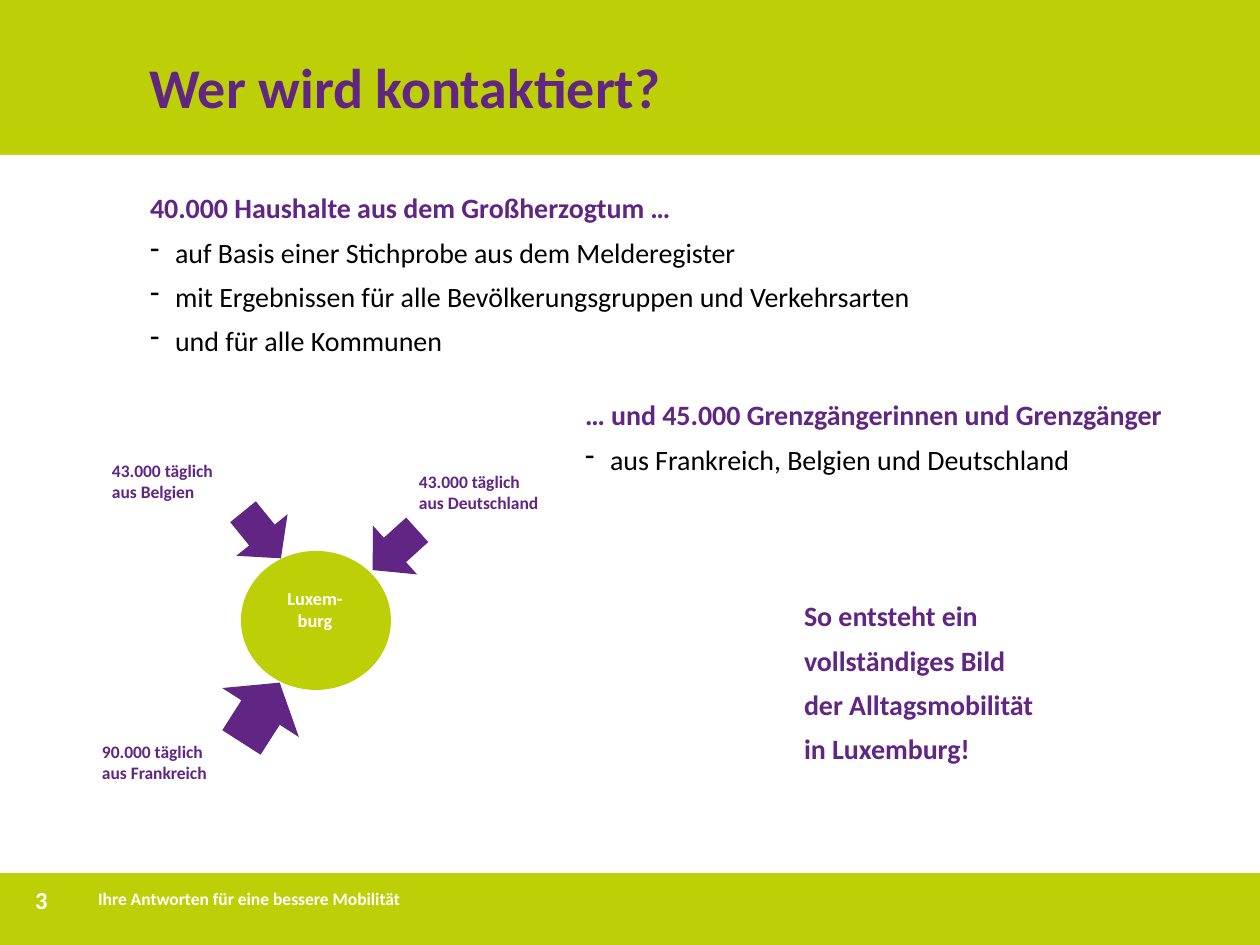
"""Build the slide on who is contacted for the mobility survey."""
import dataclasses
import typing

import lxml.etree
import pptx
import pptx.dml.color
import pptx.enum.shapes
import pptx.enum.text
import pptx.oxml.ns
import pptx.util

LIME = pptx.dml.color.RGBColor(0xBD, 0xCF, 0x06)
PURPLE = pptx.dml.color.RGBColor(0x61, 0x25, 0x83)
WHITE = pptx.dml.color.RGBColor(0xFF, 0xFF, 0xFF)
BLACK = pptx.dml.color.RGBColor(0x00, 0x00, 0x00)
PX_PER_INCH = 126
SHAPES = pptx.enum.shapes.MSO_SHAPE
ALIGN = pptx.enum.text.PP_ALIGN
ANCHOR = pptx.enum.text.MSO_ANCHOR


def px(length: int) -> int:
    return round(length * pptx.util.Inches(1) / PX_PER_INCH)


class Box(typing.NamedTuple):
    left: int
    top: int
    width: int
    height: int

    def emu(self) -> list[int]:
        return [px(length) for length in self]


@dataclasses.dataclass(frozen=True)
class Line:
    text: str
    size: float = 16
    color: pptx.dml.color.RGBColor = PURPLE
    bold: bool = True
    dash: bool = False
    format: dict = dataclasses.field(default_factory=dict)


@dataclasses.dataclass(frozen=True)
class Passage:
    box: Box
    lines: list[Line]
    insets: tuple[int, int, int, int] = (0, 6, 0, 6)
    anchor: ANCHOR = ANCHOR.TOP


@dataclasses.dataclass(frozen=True)
class Figure:
    preset: SHAPES
    box: Box
    color: pptx.dml.color.RGBColor
    rotation: float = 0


def set_attributes(target: typing.Any, values: dict) -> None:
    for attribute, value in values.items():
        setattr(target, attribute, value)


def add_dash(paragraph: typing.Any) -> None:
    properties = paragraph._p.get_or_add_pPr()
    properties.set("marL", str(px(25)))
    properties.set("indent", str(-px(25)))
    bullet = lxml.etree.SubElement(properties, pptx.oxml.ns.qn("a:buChar"))
    bullet.set("char", "-")


def write_passage(frame: typing.Any, passage: Passage) -> None:
    left, top, right, bottom = map(px, passage.insets)
    set_attributes(frame, {
        "word_wrap": True,
        "auto_size": pptx.enum.text.MSO_AUTO_SIZE.NONE,
        "vertical_anchor": passage.anchor,
        "margin_left": left,
        "margin_top": top,
        "margin_right": right,
        "margin_bottom": bottom,
    })
    for index, line in enumerate(passage.lines):
        paragraph = frame.add_paragraph() if index else frame.paragraphs[0]
        if line.dash:
            add_dash(paragraph)
        set_attributes(paragraph, {"alignment": ALIGN.LEFT} | line.format)
        run = paragraph.add_run()
        run.text = line.text
        set_attributes(run.font, {
            "name": "Calibri",
            "size": pptx.util.Pt(line.size),
            "bold": line.bold,
        })
        run.font.color.rgb = line.color


def add_passage(slide: typing.Any, passage: Passage) -> None:
    write_passage(slide.shapes.add_textbox(*passage.box.emu()).text_frame, passage)


def add_figure(slide: typing.Any, figure: Figure) -> None:
    shape = slide.shapes.add_shape(figure.preset, *figure.box.emu())
    shape.shadow.inherit = False
    shape.fill.solid()
    shape.fill.fore_color.rgb = figure.color
    shape.line.fill.background()
    shape.rotation = figure.rotation


SPACED = {"space_after": pptx.util.Pt(6)}


def heading(text: str) -> Line:
    return Line(text, format=SPACED)


def point(text: str) -> Line:
    return Line(text, color=BLACK, bold=False, dash=True, format=SPACED)


def commuters(box: Box, count: str, country: str) -> Passage:
    lines = [Line(f"{count} täglich", 10), Line(f"aus {country}", 10)]
    return Passage(box, lines, (13, 6, 13, 6))


TITLE = Passage(Box(149, 18, 1057, 137), [Line("Wer wird kontaktiert?", 32)],
                (0, 6, 15, 6), ANCHOR.MIDDLE)
FOOTER = Passage(
    Box(98, 886, 475, 49),
    [Line("Ihre Antworten für eine bessere Mobilität", 10, WHITE,
          format={"line_spacing": pptx.util.Pt(13)})],
    (0, 0, 15, 6))
PAGE_NUMBER = Passage(Box(35, 885, 69, 30), [Line("3", 14, WHITE)],
                      (0, 0, 0, 0), ANCHOR.MIDDLE)
HOUSEHOLDS = Passage(Box(150, 185, 963, 650), [
    heading("40.000 Haushalte aus dem Großherzogtum …"),
    point("auf Basis einer Stichprobe aus dem Melderegister"),
    point("mit Ergebnissen für alle Bevölkerungsgruppen und Verkehrsarten"),
    point("und für alle Kommunen"),
])
CROSS_BORDER = Passage(Box(585, 392, 675, 650), [
    heading("… und 45.000 Grenzgängerinnen und Grenzgänger"),
    point("aus Frankreich, Belgien und Deutschland"),
])
CONCLUSION = Passage(Box(804, 593, 311, 194), [
    heading(text) for text in ("So entsteht ein", "vollständiges Bild",
                               "der Alltagsmobilität", "in Luxemburg!")
])
LUXEMBOURG = Passage(
    Box(261, 581, 108, 76),
    [Line(text, 10.5, WHITE, format={"alignment": ALIGN.CENTER})
     for text in ("Luxem-", "burg")],
    (13, 6, 13, 6))
PASSAGES = [
    FOOTER, PAGE_NUMBER, HOUSEHOLDS, CROSS_BORDER, CONCLUSION,
    commuters(Box(89, 735, 175, 73), "90.000", "Frankreich"),
    commuters(Box(99, 454, 175, 73), "43.000", "Belgien"),
    commuters(Box(406, 465, 194, 73), "43.000", "Deutschland"),
    LUXEMBOURG,
]
CONTENT_AREA = Figure(SHAPES.RECTANGLE, Box(0, 155, 1260, 718), WHITE)
COUNTRY = Figure(SHAPES.OVAL, Box(241, 551, 150, 139), LIME)
INFLOWS = [
    Figure(SHAPES.DOWN_ARROW, Box(215, 677, 91, 71), PURPLE, 212.6),
    Figure(SHAPES.DOWN_ARROW, Box(362, 520, 66, 60), PURPLE, 47.9),
    Figure(SHAPES.DOWN_ARROW, Box(229, 505, 66, 60), PURPLE, 320.9),
]


def main() -> None:
    presentation = pptx.Presentation()
    set_attributes(presentation, {"slide_width": px(1260), "slide_height": px(945)})
    slide = presentation.slides.add_slide(
        presentation.slide_layouts.get_by_name("Title Only"))
    slide.background.fill.solid()
    slide.background.fill.fore_color.rgb = LIME
    title = slide.shapes.title
    set_attributes(title, dict(zip(Box._fields, TITLE.box.emu())))
    write_passage(title.text_frame, TITLE)
    for figure in (CONTENT_AREA, COUNTRY):
        add_figure(slide, figure)
    for passage in PASSAGES:
        add_passage(slide, passage)
    for inflow in INFLOWS:
        add_figure(slide, inflow)
    presentation.save("out.pptx")


if __name__ == "__main__":
    main()
